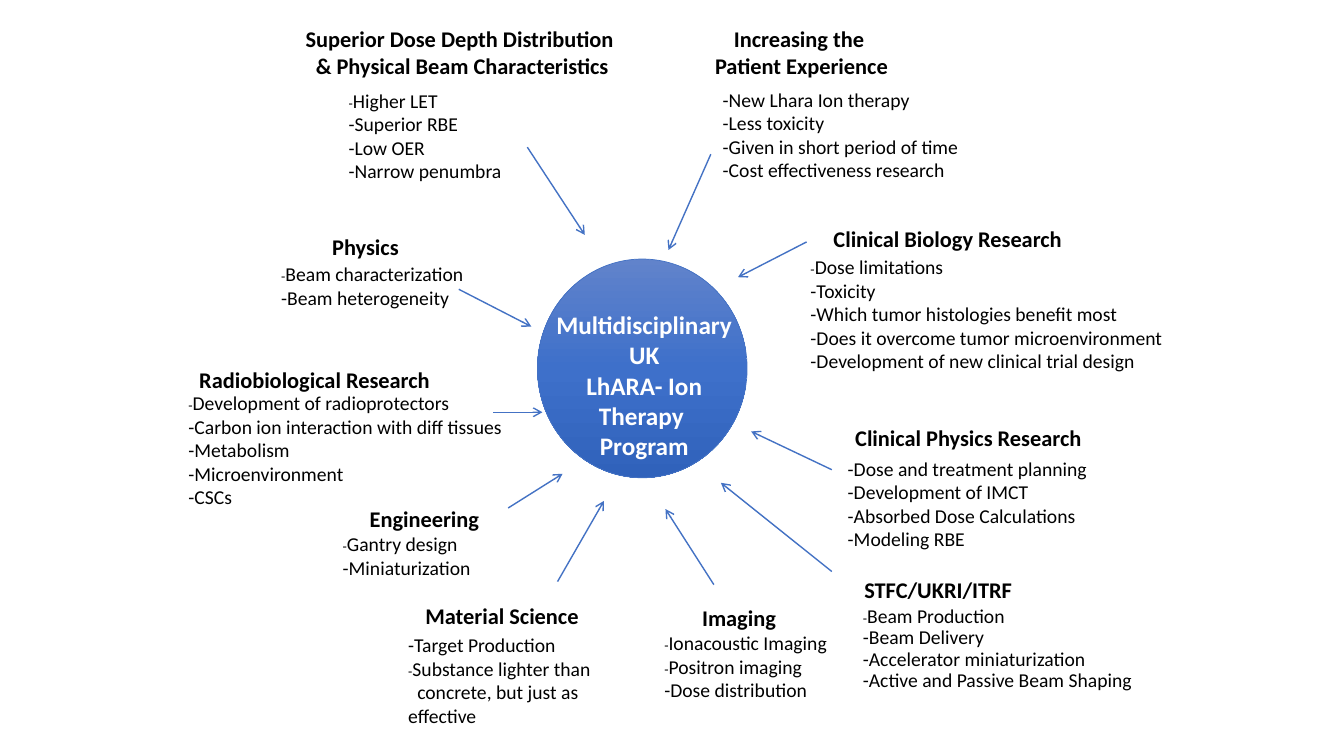
from copy import deepcopy
from dataclasses import dataclass

from pptx import Presentation
from pptx import util as u
from pptx.dml.color import RGBColor
from pptx.enum import shapes, text
from pptx.oxml import ns, xmlchemy


@dataclass(frozen=True)
class Theme:
    font: str = "Calibri"
    ink: str = "000000"
    light: str = "FFFFFF"
    accent: str = "4472C4"
    gradient: tuple = ((0, "6183CB"), (0.5, "3E70CA"), (1, "3062BB"))
    hub: int = 18
    heading: int = 16
    body: int = 14
    small_dash: int = 10
    arrow_width: float = 1
    disc_outline: float = 0.5


@dataclass(frozen=True)
class Topic:
    heading: tuple
    heading_at: tuple
    items: tuple
    items_at: tuple
    arrow: tuple
    small_dashes: tuple = (0,)
    heading_spacing: float = 1
    items_spacing: float = 1
    continuation: str = ""


THEME = Theme()

HUB_LINES = ("Multidisciplinary", "UK\nLhARA- Ion", "Therapy ", "Program")

TOPICS = (
    Topic(("Superior Dose Depth Distribution ", "& Physical Beam Characteristics"),
          (2.91, 0.2, 3.35, 0.64),
          ("Higher LET", "Superior RBE", "Low OER", "Narrow penumbra"),
          (3.36, 0.83, 1.73, 1.04), (5.23, 1.46, 5.8, 2.33)),
    Topic(("Increasing the ", "Patient Experience"), (6.98, 0.2, 1.94, 0.64),
          ("New Lhara Ion therapy", "Less toxicity", "Given in short period of time",
           "Cost effectiveness research"),
          (7.07, 0.82, 2.56, 1.21), (7.05, 1.53, 6.63, 2.48), small_dashes=()),
    Topic(("Clinical Biology Research",), (8.15, 2.18, 2.5, 0.37),
          ("Dose limitations", "Toxicity", "Which tumor histologies benefit most",
           "Does it overcome tumor microenvironment",
           "Development of new clinical trial design"),
          (7.94, 2.48, 3.72, 1.28), (8, 2.4, 7.32, 2.75)),
    Topic(("Clinical Physics Research",), (8.37, 4.16, 2.47, 0.37),
          ("Dose and treatment planning", "Development of IMCT",
           "Absorbed Dose Calculations", "Modeling RBE"),
          (8.31, 4.48, 2.64, 1.04), (8.25, 4.66, 7.45, 4.28), small_dashes=()),
    Topic(("STFC/UKRI/ITRF",), (8.46, 5.67, 1.69, 0.37),
          ("Beam Production", "Beam Delivery", "Accelerator miniaturization",
           "Active and Passive Beam Shaping"),
          (8.46, 5.97, 2.9, 0.95), (8.25, 5.67, 7.15, 4.79), items_spacing=0.9),
    Topic(("Imaging",), (6.86, 5.94, 0.94, 0.37),
          ("Ionacoustic Imaging", "Positron imaging", "Dose distribution"),
          (6.49, 6.21, 1.86, 0.81), (7.08, 5.8, 6.6, 5.05), small_dashes=(0, 1)),
    Topic(("Material Science",), (4.11, 5.92, 1.74, 0.37),
          ("Target Production", "Substance lighter than"),
          (3.95, 6.23, 2.45, 1.04), (5.53, 5.77, 5.99, 4.97), small_dashes=(1,),
          continuation="concrete, but just as effective"),
    Topic(("Engineering",), (3.56, 4.96, 1.3, 0.37),
          ("Gantry design", "Miniaturization"),
          (3.3, 5.23, 1.49, 0.57), (5.04, 5.04, 5.58, 4.7)),
    Topic(("Radiobiological Research",), (1.86, 3.63, 2.52, 0.32),
          ("Development of radioprotectors", "Carbon ion interaction with diff tissues",
           "Metabolism", "Microenvironment", "CSCs"),
          (1.77, 3.83, 3.35, 1.28), (4.89, 4.09, 5.38, 4.09), heading_spacing=0.8),
    Topic(("Physics",), (3.19, 2.26, 0.87, 0.37),
          ("Beam characterization", "Beam heterogeneity"),
          (2.69, 2.55, 2.03, 0.57), (4.55, 2.87, 5.27, 3.24)),
)


def inches(values):
    return [u.Inches(value) for value in values]


def add_box(page, place, wrap=False):
    frame = page.shapes.add_textbox(*inches(place)).text_frame
    frame.word_wrap = wrap
    frame.auto_size = text.MSO_AUTO_SIZE.SHAPE_TO_FIT_TEXT
    return frame


def add_para(frame, first, spacing=1, align=text.PP_ALIGN.LEFT):
    para = frame.paragraphs[0] if first else frame.add_paragraph()
    para.alignment = align
    para.line_spacing = spacing
    return para


def add_span(para, words, size, color=THEME.ink, bold=False):
    span = para.add_run()
    span.text = words
    span.font.name = THEME.font
    span.font.size = u.Pt(size)
    span.font.bold = bold
    span.font.color.rgb = RGBColor.from_string(color)


def add_centred_lines(page, place, lines, size, color=THEME.ink, spacing=1):
    frame = add_box(page, place)
    for index, line in enumerate(lines):
        para = add_para(frame, index == 0, spacing, text.PP_ALIGN.CENTER)
        for part, words in enumerate(line.split("\n")):
            if part:
                para.add_line_break()
            add_span(para, words, size, color, bold=True)


def add_items(page, topic):
    frame = add_box(page, topic.items_at, wrap=bool(topic.continuation))
    for index, item in enumerate(topic.items):
        para = add_para(frame, index == 0, topic.items_spacing)
        if index in topic.small_dashes:
            add_span(para, "-", THEME.small_dash)
            add_span(para, item, THEME.body)
        else:
            add_span(para, "-" + item, THEME.body)
    if topic.continuation:
        para = add_para(frame, False, topic.items_spacing)
        props = para._p.get_or_add_pPr()
        props.set("marL", "0")
        props.set("indent", str(u.Inches(0.09)))
        add_span(para, topic.continuation, THEME.body)


def add_arrow(page, ends):
    arrow = page.shapes.add_connector(shapes.MSO_CONNECTOR.STRAIGHT, *inches(ends))
    arrow.line.color.rgb = RGBColor.from_string(THEME.accent)
    arrow.line.width = u.Pt(THEME.arrow_width)
    head = xmlchemy.OxmlElement("a:tailEnd")
    head.set("type", "arrow")
    arrow.line._get_or_add_ln().append(head)
    arrow._element.spPr.append(xmlchemy.OxmlElement("a:effectLst"))


def add_disc(page, place):
    disc = page.shapes.add_shape(shapes.MSO_SHAPE.OVAL, *inches(place))
    disc.shadow.inherit = False
    disc.fill.gradient()
    disc.fill.gradient_angle = 270
    stop_list = disc._element.spPr.find(ns.qn("a:gradFill")).find(ns.qn("a:gsLst"))
    stop_list.append(deepcopy(stop_list[-1]))
    for stop, (position, color) in zip(disc.fill.gradient_stops, THEME.gradient):
        stop.position = position
        stop.color.rgb = RGBColor.from_string(color)
    disc.line.color.rgb = RGBColor.from_string(THEME.accent)
    disc.line.width = u.Pt(THEME.disc_outline)


def add_topic(page, topic):
    add_arrow(page, topic.arrow)
    add_centred_lines(page, topic.heading_at, topic.heading, THEME.heading,
                      spacing=topic.heading_spacing)
    add_items(page, topic)


def main():
    deck = Presentation()
    deck.slide_width, deck.slide_height = inches((13.33, 7.5))
    page = deck.slides.add_slide(deck.slide_layouts.get_by_name("Blank"))
    add_disc(page, (5.33, 2.57, 2.08, 2.17))
    add_centred_lines(page, (5.41, 3.02, 1.96, 1.62), HUB_LINES, THEME.hub, THEME.light)
    for topic in TOPICS:
        add_topic(page, topic)
    deck.save("out.pptx")


if __name__ == "__main__":
    main()
